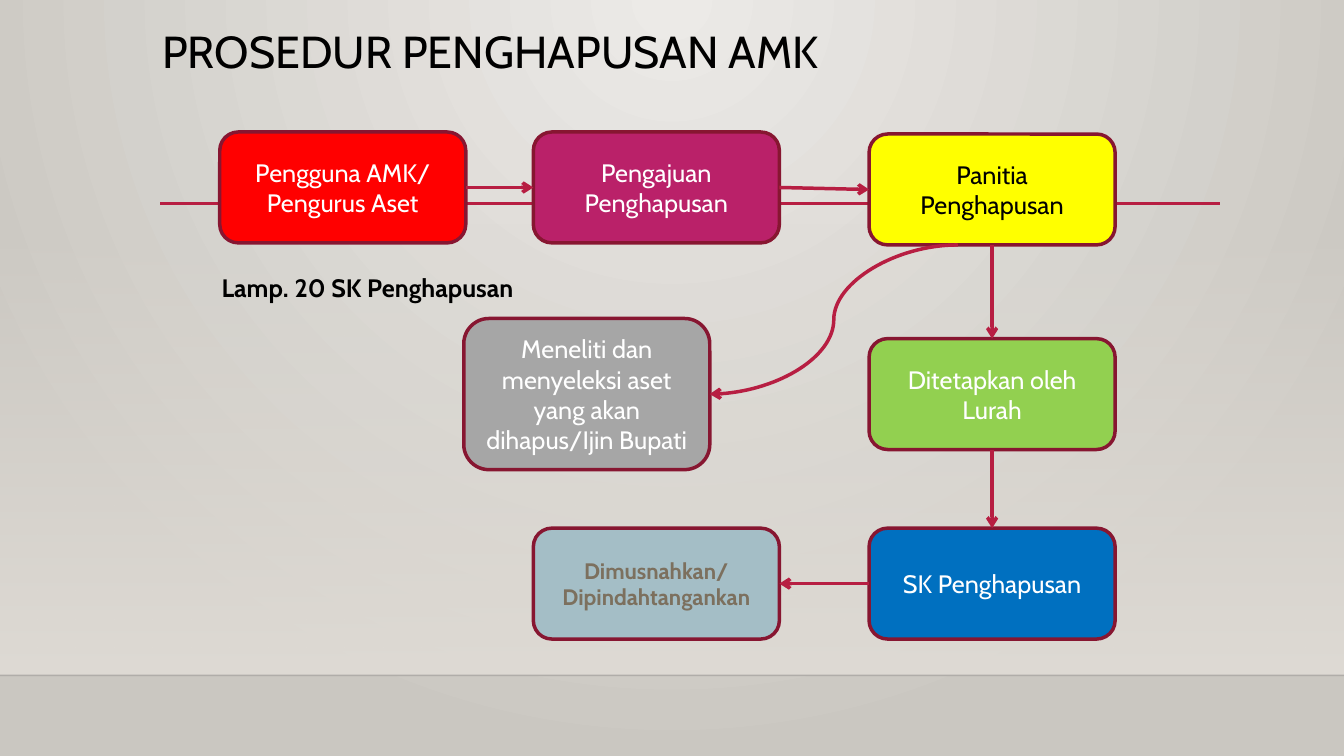
from dataclasses import dataclass

from lxml.etree import SubElement
from pptx import Presentation
from pptx.dml.color import RGBColor
from pptx.enum.shapes import MSO_CONNECTOR as Connector, MSO_SHAPE as Shape
from pptx.enum.text import MSO_ANCHOR as Anchor, PP_ALIGN as Align
from pptx.oxml.ns import qn
from pptx.util import Inches, Pt

COLORS = {
    "glow": "ECEAE7", "edge": "CAC7C1", "wall": "DFDBD5", "floor": "000001",
    "accent": "B71E42", "border": "871631", "black": "000000", "white": "FFFFFF",
    "red": "FF0000", "magenta": "BA2169", "yellow": "FFFF00", "green": "92D050",
    "blue": "0070C0", "mist": "A4BEC6", "gray": "A6A6A6", "taupe": "7C705E",
}
STEP_W, STEP_H = 2.44, 1.1
LEFT_X, MIDDLE_X, RIGHT_X = 2.18, 5.29, 8.62
TOP_Y, PANEL_Y, DECREE_Y, FINAL_Y = 1.31, 1.33, 3.36, 5.24


@dataclass(frozen=True)
class Step:
    label: str
    x: float
    y: float
    fill: str
    height: float = STEP_H
    color: str = "white"
    size: int = 18
    bold: bool = False

    @property
    def left(self) -> tuple[float, float]:
        return self.x, self.y + self.height / 2

    @property
    def right(self) -> tuple[float, float]:
        return self.x + STEP_W, self.y + self.height / 2

    @property
    def top(self) -> tuple[float, float]:
        return self.x + STEP_W / 2, self.y

    @property
    def bottom(self) -> tuple[float, float]:
        return self.x + STEP_W / 2, self.y + self.height


@dataclass(frozen=True)
class Link:
    start: tuple[float, float]
    end: tuple[float, float]
    kind: Connector = Connector.STRAIGHT
    color: str = "accent"
    width: float = 2.5
    arrow: bool = True
    opacity: int = 100


def rgb(name: str) -> RGBColor:
    return RGBColor.from_string(COLORS[name])


def set_alpha(parent, percent: int) -> None:
    color = next(parent.iter(qn("a:srgbClr")))
    SubElement(color, qn("a:alpha")).set("val", str(percent * 1000))


def write_text(shape, text: str, *, size: int = 18, color: str = "black",
               bold: bool = False, align: Align = Align.LEFT,
               anchor: Anchor = Anchor.TOP, spacing: float = 1.0) -> None:
    frame = shape.text_frame
    frame.word_wrap = True
    frame.vertical_anchor = anchor
    paragraph = frame.paragraphs[0]
    paragraph.text = text
    paragraph.alignment = align
    paragraph.line_spacing = spacing
    font = paragraph.runs[0].font
    font.name, font.size, font.bold = "Cabin", Pt(size), bold
    font.color.rgb = rgb(color)


def draw_step(slide, step: Step) -> None:
    box = slide.shapes.add_shape(
        Shape.ROUNDED_RECTANGLE,
        Inches(step.x), Inches(step.y), Inches(STEP_W), Inches(step.height))
    box.shadow.inherit = False
    box.fill.solid()
    box.fill.fore_color.rgb = rgb(step.fill)
    box.line.color.rgb = rgb("border")
    box.line.width = Pt(2.5)
    write_text(box, step.label, size=step.size, color=step.color,
               bold=step.bold, align=Align.CENTER, anchor=Anchor.MIDDLE)


def draw_link(slide, link: Link) -> None:
    connector = slide.shapes.add_connector(
        link.kind, *(Inches(value) for value in link.start + link.end))
    connector.line.color.rgb = rgb(link.color)
    connector.line.width = Pt(link.width)
    properties = connector.element.spPr
    line = properties.find(qn("a:ln"))
    if link.opacity < 100:
        set_alpha(line, link.opacity)
    if link.arrow:
        SubElement(line, qn("a:tailEnd")).set("type", "arrow")
    SubElement(properties, qn("a:effectLst"))


def set_gradient(fill, start: str, end: str) -> None:
    fill.gradient()
    for stop, name in zip(fill.gradient_stops, (start, end)):
        stop.color.rgb = rgb(name)


def draw_backdrop(slide) -> None:
    set_gradient(slide.background.fill, "glow", "edge")
    gradient = next(slide.element.iter(qn("a:gradFill")))
    gradient.remove(gradient.find(qn("a:lin")))
    circle = SubElement(gradient, qn("a:path"))
    circle.set("path", "circle")
    focus = SubElement(circle, qn("a:fillToRect"))
    for side, percent in zip("ltrb", (43, 0, 43, 100)):
        focus.set(side, str(percent * 1000))

    wall = slide.shapes.add_shape(
        Shape.RECTANGLE, 0, Inches(2.21), Inches(13.33), Inches(4.49))
    wall.shadow.inherit = False
    wall.line.fill.background()
    set_gradient(wall.fill, "wall", "wall")
    wall.fill.gradient_angle = 270
    set_alpha(wall.element.spPr, 0)

    draw_link(slide, Link((0, 6.7), (13.33, 6.7), color="floor", width=1,
                          arrow=False, opacity=20))
    draw_link(slide, Link((1.59, 2.02), (12.1, 2.02), arrow=False))


def main() -> None:
    presentation = Presentation()
    presentation.slide_width = Inches(13.33)
    presentation.slide_height = Inches(7.5)
    slide = presentation.slides.add_slide(presentation.slide_layouts[6])
    draw_backdrop(slide)

    title = slide.shapes.add_textbox(
        Inches(1.51), Inches(0.25), Inches(9), Inches(0.67))
    write_text(title, "PROSEDUR PENGHAPUSAN AMK", size=32, spacing=0.9)

    user = Step("Pengguna AMK/ Pengurus Aset", LEFT_X, TOP_Y, "red")
    proposal = Step("Pengajuan Penghapusan", MIDDLE_X, TOP_Y, "magenta")
    committee = Step("Panitia Penghapusan", RIGHT_X, PANEL_Y, "yellow", color="black")
    approval = Step("Ditetapkan oleh Lurah", RIGHT_X, DECREE_Y, "green")
    decree = Step("SK Penghapusan", RIGHT_X, FINAL_Y, "blue")
    disposal = Step("Dimusnahkan/ Dipindahtangankan", MIDDLE_X, FINAL_Y, "mist",
                    color="taupe", size=16, bold=True)
    review = Step("Meneliti dan menyeleksi aset yang akan dihapus/Ijin Bupati",
                  4.6, 3.16, "gray", height=1.5)
    for step in (user, proposal, committee, approval, decree, disposal, review):
        draw_step(slide, step)

    for link in (
        Link(user.right, proposal.left),
        Link(proposal.right, committee.left),
        Link(committee.bottom, approval.top),
        Link(approval.bottom, decree.top),
        Link(decree.left, disposal.right),
        Link((9.5, 2.43), review.right, kind=Connector.CURVE),
    ):
        draw_link(slide, link)

    attachment = slide.shapes.add_textbox(
        Inches(2.1), Inches(2.65), Inches(3.54), Inches(0.4))
    write_text(attachment, "Lamp. 20 SK Penghapusan", bold=True)

    presentation.save("out.pptx")


if __name__ == "__main__":
    main()
